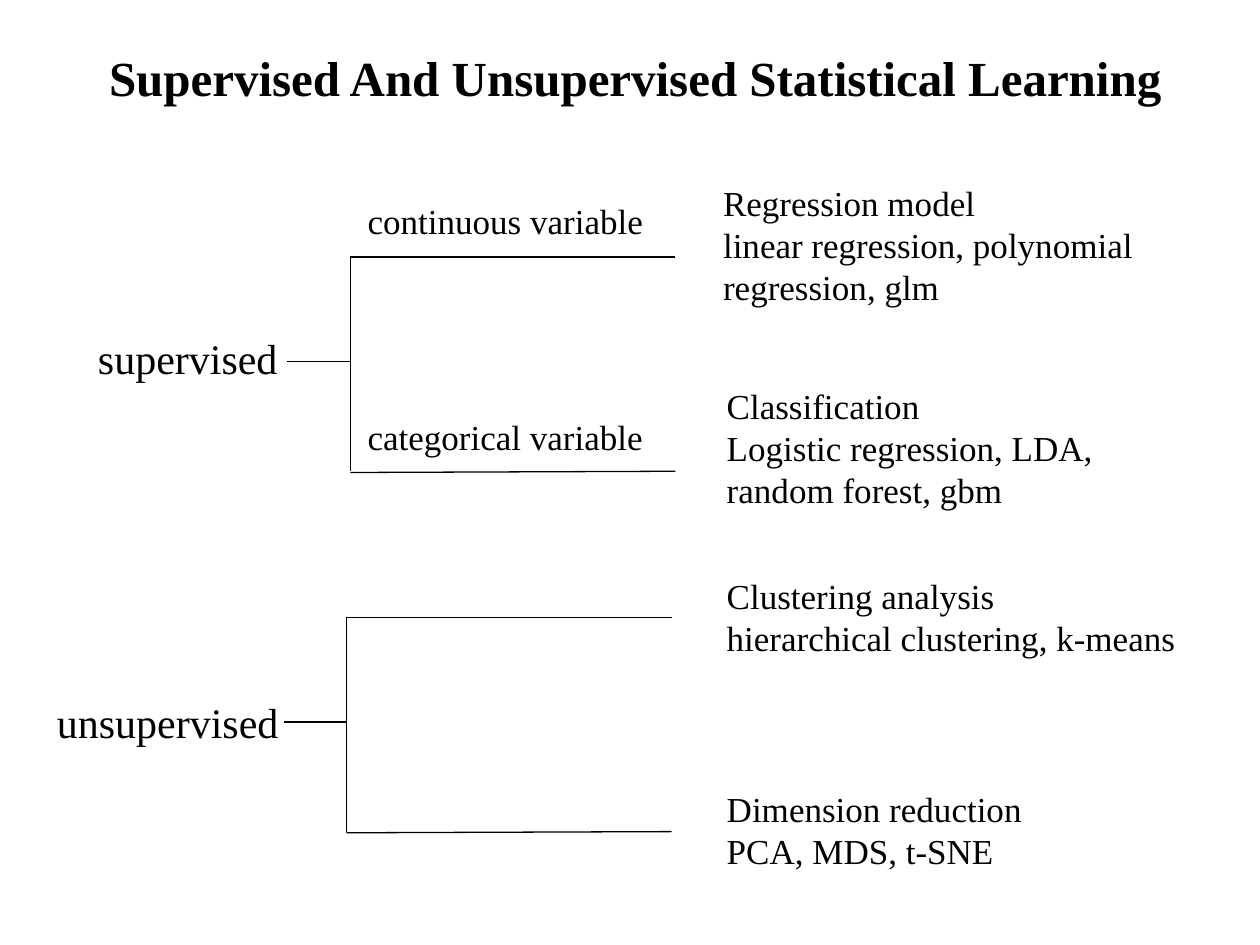
from dataclasses import dataclass

from lxml.etree import SubElement
from pptx import Presentation
from pptx.dml.color import RGBColor
from pptx.enum.shapes import MSO_CONNECTOR
from pptx.enum.text import MSO_AUTO_SIZE, PP_ALIGN
from pptx.oxml.ns import qn
from pptx.slide import Slide
from pptx.util import Pt

COLORS = {"ink": "000000", "page": "FFFFFF"}
FRAME = {"word_wrap": True, "auto_size": MSO_AUTO_SIZE.SHAPE_TO_FIT_TEXT}
FONT = {"name": "Times New Roman", "bold": False}
STYLES = {
    "title": FONT | {"size": Pt(28), "bold": True},
    "branch": FONT | {"size": Pt(24)},
    "detail": FONT | {"size": Pt(20)},
}


@dataclass
class Label:
    left: float
    top: float
    width: float
    height: float
    style: str
    lines: tuple[str, ...]


@dataclass
class Fork:
    left: float
    top: float


LABELS = [
    Label(23.8, 23.8, 678.2, 41, "title",
          ("Supervised And Unsupervised Statistical Learning",)),
    Label(35.3, 186.5, 144, 36, "branch", ("supervised",)),
    Label(23.8, 394.6, 144, 36, "branch", ("unsupervised",)),
    Label(406.1, 100.1, 282.2, 79.9, "detail",
          ("Regression model", "linear regression, polynomial regression, glm")),
    Label(408.2, 216, 282.2, 79.9, "detail",
          ("Classification", "Logistic regression, LDA, random forest, gbm")),
    Label(408.2, 324.7, 282.2, 55.4, "detail",
          ("Clustering analysis", "hierarchical clustering, k-means")),
    Label(408.2, 446.4, 282.2, 55.4, "detail",
          ("Dimension reduction", "PCA, MDS, t-SNE")),
    Label(203, 110.2, 182.9, 31.7, "detail", ("continuous variable",)),
    Label(203, 234, 182.9, 31.7, "detail", ("categorical variable",)),
]
FORKS = [Fork(164.2, 146.9), Fork(162, 352.8)]
STROKES = [
    (0, 59.8, 36, 59.8),
    (36, 0, 221.8, 0),
    (36, 123.1, 221.8, 122.4),
    (36, 0, 36, 122.4),
]


def tint(name: str) -> RGBColor:
    return RGBColor.from_string(COLORS[name])


def apply(target: object, values: dict) -> None:
    for key, value in values.items():
        setattr(target, key, value)


def write(slide: Slide, label: Label) -> None:
    box = slide.shapes.add_textbox(
        Pt(label.left), Pt(label.top), Pt(label.width), Pt(label.height))
    frame = box.text_frame
    apply(frame, FRAME)
    frame.text = "\n".join(label.lines)
    for para in frame.paragraphs:
        para.alignment = PP_ALIGN.LEFT if label.style == "detail" else PP_ALIGN.CENTER
        for run in para.runs:
            apply(run.font, STYLES[label.style])
            run.font.color.rgb = tint("ink")


def draw(slide: Slide, fork: Fork) -> None:
    group = slide.shapes.add_group_shape()
    for x1, y1, x2, y2 in STROKES:
        line = group.shapes.add_connector(
            MSO_CONNECTOR.STRAIGHT,
            Pt(fork.left + x1), Pt(fork.top + y1),
            Pt(fork.left + x2), Pt(fork.top + y2))
        line.line.width = Pt(0.75)
        line.line.color.rgb = tint("ink")
        SubElement(line._element.spPr, qn("a:effectLst"))


def main() -> None:
    deck = Presentation()
    apply(deck, {"slide_width": Pt(720), "slide_height": Pt(540)})
    slide = deck.slides.add_slide(deck.slide_layouts[6])
    fill = slide.background.fill
    fill.solid()
    fill.fore_color.rgb = tint("page")
    for label in LABELS:
        write(slide, label)
    for fork in FORKS:
        draw(slide, fork)
    deck.save("out.pptx")


if __name__ == "__main__":
    main()
